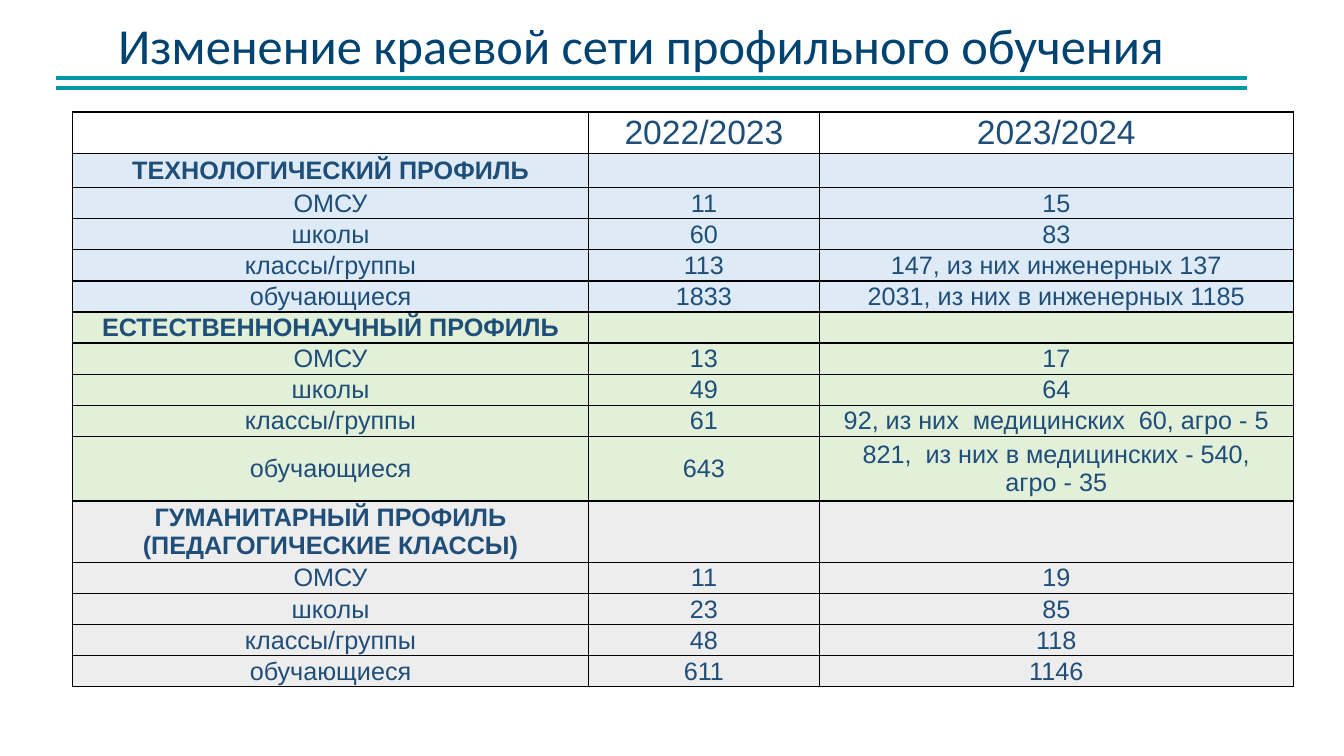
from pptx import Presentation
from pptx.dml.color import RGBColor
from pptx.enum.shapes import MSO_CONNECTOR
from pptx.enum.text import MSO_ANCHOR, MSO_AUTO_SIZE, PP_ALIGN
from pptx.oxml import parse_xml
from pptx.oxml.ns import nsdecls, qn
from pptx.util import Cm, Pt
from lxml.etree import SubElement

TEAL = RGBColor(0x01, 0x98, 0xA7)
NAVY = RGBColor(0x00, 0x42, 0x70)
TEXT_BLUE = RGBColor(0x1F, 0x4E, 0x79)
PALE_BLUE = RGBColor(0xDE, 0xEB, 0xF7)
PALE_GREEN = RGBColor(0xE2, 0xF0, 0xD9)
PALE_GREY = RGBColor(0xED, 0xED, 0xED)

INDICATORS = ["ОМСУ", "школы", "классы/группы", "обучающиеся"]
PROFILES = [
    ("ТЕХНОЛОГИЧЕСКИЙ ПРОФИЛЬ", PALE_BLUE,
     ["11", "60", "113", "1833"],
     ["15", "83", "147, из них инженерных 137", "2031, из них в инженерных 1185"]),
    ("ЕСТЕСТВЕННОНАУЧНЫЙ ПРОФИЛЬ", PALE_GREEN,
     ["13", "49", "61", "643"],
     ["17", "64", "92, из них  медицинских  60, агро - 5",
      "821,  из них в медицинских - 540,\nагро - 35"]),
    ("ГУМАНИТАРНЫЙ ПРОФИЛЬ (ПЕДАГОГИЧЕСКИЕ КЛАССЫ)", PALE_GREY,
     ["11", "23", "48", "611"],
     ["19", "85", "118", "1146"]),
]
COL_WIDTHS = [13.0, 5.82, 11.94]
ROW_HEIGHT = 0.78
SPECIAL_HEIGHTS = {0: 1.04, 1: 0.87, 10: 1.63, 11: 1.54}


def add_run(p, text, font, size, color, bold=False):
    r = p.add_run()
    r.text = text
    r.font.name = font
    r.font.size = Pt(size)
    r.font.bold = bold
    r.font.color.rgb = color


def style_cell(cell, fill):
    cell.vertical_anchor = MSO_ANCHOR.MIDDLE
    cell.margin_left = cell.margin_right = cell.margin_top = Cm(0.02)
    cell.margin_bottom = 0
    tc_pr = cell._tc.get_or_add_tcPr()
    for side in ("lnL", "lnR", "lnT", "lnB"):
        tc_pr.append(parse_xml(
            f'<a:{side} {nsdecls("a")} w="12700"><a:solidFill>'
            f'<a:srgbClr val="000000"/></a:solidFill></a:{side}>'))
    if fill is None:
        cell.fill.background()
    else:
        cell.fill.solid()
        cell.fill.fore_color.rgb = fill


prs = Presentation()
prs.slide_width, prs.slide_height = Cm(33.87), Cm(19.05)
s = prs.slides.add_slide(prs.slide_layouts[5])

# Double rule under the title
for y in (1.96, 2.21):
    rule = s.shapes.add_connector(MSO_CONNECTOR.STRAIGHT, Cm(1.42), Cm(y), Cm(31.42), Cm(y))
    rule.line.color.rgb = TEAL
    rule.line.width = Pt(3)
    SubElement(rule._element.spPr, qn("a:effectLst"))

# Title
title = s.shapes.title
title.left, title.top, title.width, title.height = Cm(0), Cm(0.61), Cm(32.33), Cm(1.4)
tf = title.text_frame
tf.word_wrap = True
tf.auto_size = MSO_AUTO_SIZE.SHAPE_TO_FIT_TEXT
p = tf.paragraphs[0]
p.alignment = PP_ALIGN.CENTER
p.line_spacing = 0.7
add_run(p, "Изменение краевой сети профильного обучения", "Calibri", 36, NAVY)

# Table rows: texts, fill, text size, bold
rows = [(["", "2022/2023", "2023/2024"], None, 24, False)]
for name, fill, before, after in PROFILES:
    rows.append(([name, "", ""], fill, 18, True))
    rows += [(texts, fill, 18, False) for texts in zip(INDICATORS, before, after)]

# Table
heights = [SPECIAL_HEIGHTS.get(i, ROW_HEIGHT) for i in range(len(rows))]
frame = s.shapes.add_table(len(rows), len(COL_WIDTHS), Cm(1.83), Cm(2.82),
                           Cm(sum(COL_WIDTHS)), Cm(sum(heights)))
table = frame.table
table.first_row = table.horz_banding = False
for col, width in zip(table.columns, COL_WIDTHS):
    col.width = Cm(width)

for row, height, (texts, fill, size, bold) in zip(table.rows, heights, rows):
    row.height = Cm(height)
    for cell, text in zip(row.cells, texts):
        style_cell(cell, fill)
        tf = cell.text_frame
        for i, line in enumerate(text.split("\n")):
            p = tf.add_paragraph() if i else tf.paragraphs[0]
            p.alignment = PP_ALIGN.CENTER
            if line:
                add_run(p, line, "Arial", size, TEXT_BLUE, bold)
            else:
                p.font.size = Pt(size)

prs.save("out.pptx")
